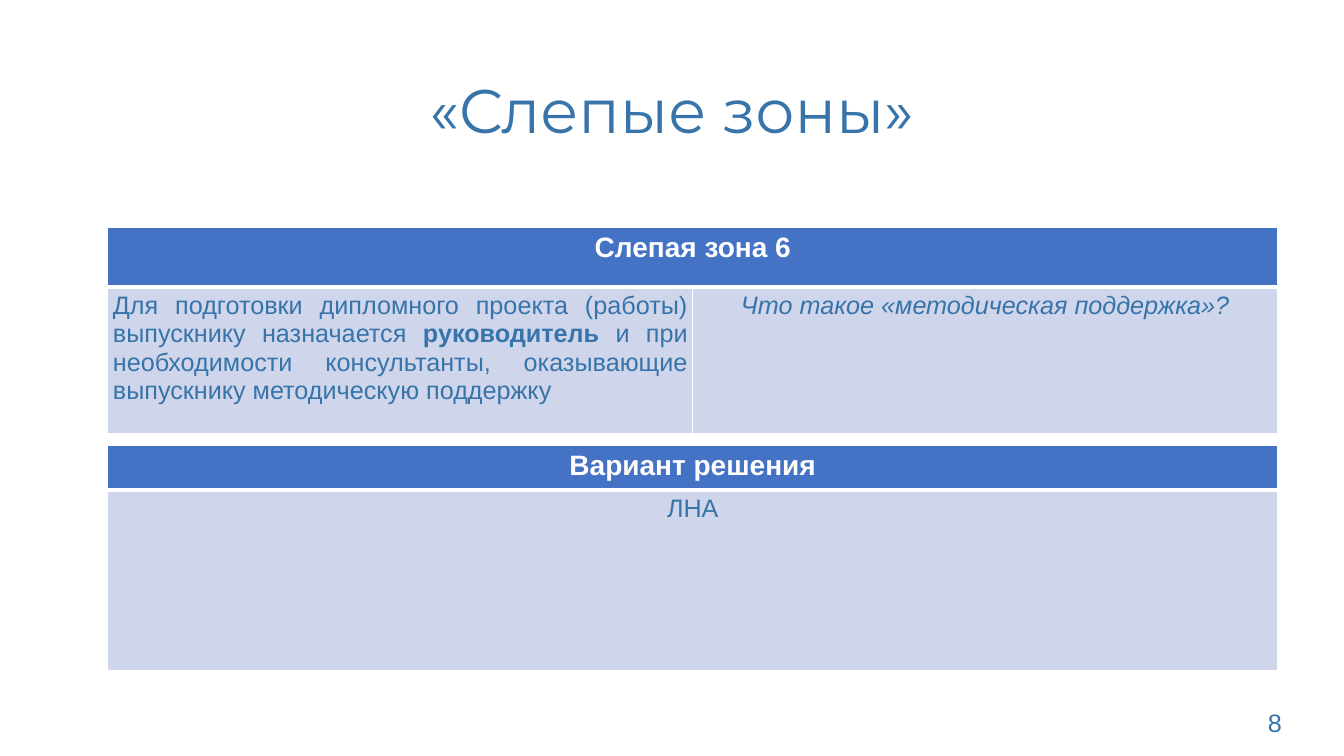
from lxml.etree import SubElement
from pptx import Presentation
from pptx.dml.color import RGBColor
from pptx.enum.text import MSO_ANCHOR, PP_ALIGN
from pptx.oxml.ns import qn
from pptx.util import Pt

BLUE = RGBColor(0x37, 0x74, 0xA9)
HEADER = RGBColor(0x44, 0x72, 0xC4)
PALE = RGBColor(0xCF, 0xD5, 0xEA)
WHITE = RGBColor(0xFF, 0xFF, 0xFF)
TABLE_LEFT = 77.04
TABLE_WIDTH = 835.6


def style_span(span, size, color, font="Arial", bold=False, italic=False):
    span.font.name = font
    span.font.size = Pt(size)
    span.font.color.rgb = color
    span.font.bold = bold
    span.font.italic = italic


def add_text(page, text, left, top, width, height, size, font, align):
    box = page.shapes.add_textbox(Pt(left), Pt(top), Pt(width), Pt(height))
    frame = box.text_frame
    frame.word_wrap = True
    frame.text = text
    para = frame.paragraphs[0]
    para.alignment = align
    style_span(para.runs[0], size, BLUE, font)
    return frame


def add_borders(cell, bottom):
    properties = cell._tc.get_or_add_tcPr()
    for side, width in (("L", 1), ("R", 1), ("T", 1), ("B", bottom)):
        line = SubElement(properties, qn(f"a:ln{side}"), w=str(Pt(width)))
        fill = SubElement(line, qn("a:solidFill"))
        SubElement(fill, qn("a:srgbClr"), val=str(WHITE))


def add_grid(page, top, heights, columns):
    frame = page.shapes.add_table(len(heights), columns, Pt(TABLE_LEFT), Pt(top),
                                  Pt(TABLE_WIDTH), Pt(sum(heights)))
    table = frame.table
    for column in table.columns:
        column.width = Pt(TABLE_WIDTH / columns)
    for row, height in zip(table.rows, heights):
        row.height = Pt(height)
    for index, row in enumerate(table.rows):
        for cell in row.cells:
            add_borders(cell, 1 if index else 3)
            cell.fill.solid()
            cell.fill.fore_color.rgb = PALE if index else HEADER
    return table


def fill_cell(cell, parts, size=18, color=BLUE, align=PP_ALIGN.CENTER, side=7.2):
    cell.margin_left = cell.margin_right = Pt(side)
    cell.margin_top = cell.margin_bottom = Pt(3.6)
    para = cell.text_frame.paragraphs[0]
    para.alignment = align
    for text, bold, italic in parts:
        span = para.add_run()
        span.text = text
        style_span(span, size, color, bold=bold, italic=italic)


def fill_header(cell, text):
    fill_cell(cell, [(text, True, False)], size=20, color=WHITE)


def main():
    deck = Presentation()
    deck.slide_width, deck.slide_height = Pt(960), Pt(540)
    page = deck.slides.add_slide(deck.slide_layouts[6])

    add_text(page, "8", 898.6, 501.8, 49.7, 28.8, 18, "Arial", PP_ALIGN.LEFT)
    title = add_text(page, "«Слепые зоны»", 66, 28.75, 828, 104.4, 44,
                     "Montserrat", PP_ALIGN.CENTER)
    title.vertical_anchor = MSO_ANCHOR.MIDDLE
    title.paragraphs[0].line_spacing = 0.9

    zone = add_grid(page, 162.3, (42.5, 105.1), 2)
    zone.cell(0, 0).merge(zone.cell(0, 1))
    fill_header(zone.cell(0, 0), "Слепая зона 6")
    fill_cell(zone.cell(1, 0), [
        ("Для подготовки дипломного проекта (работы) выпускнику назначается ", False, False),
        ("руководитель", True, False),
        (" и при необходимости консультанты, оказывающие выпускнику методическую поддержку",
         False, False),
    ], align=PP_ALIGN.JUSTIFY, side=3.6)
    fill_cell(zone.cell(1, 1), [("Что такое «методическая поддержка»?", False, True)], side=3.6)

    solution = add_grid(page, 318.2, (31.7, 128.9), 1)
    fill_header(solution.cell(0, 0), "Вариант решения")
    fill_cell(solution.cell(1, 0), [("ЛНА", False, False)])

    deck.save("out.pptx")


if __name__ == "__main__":
    main()
